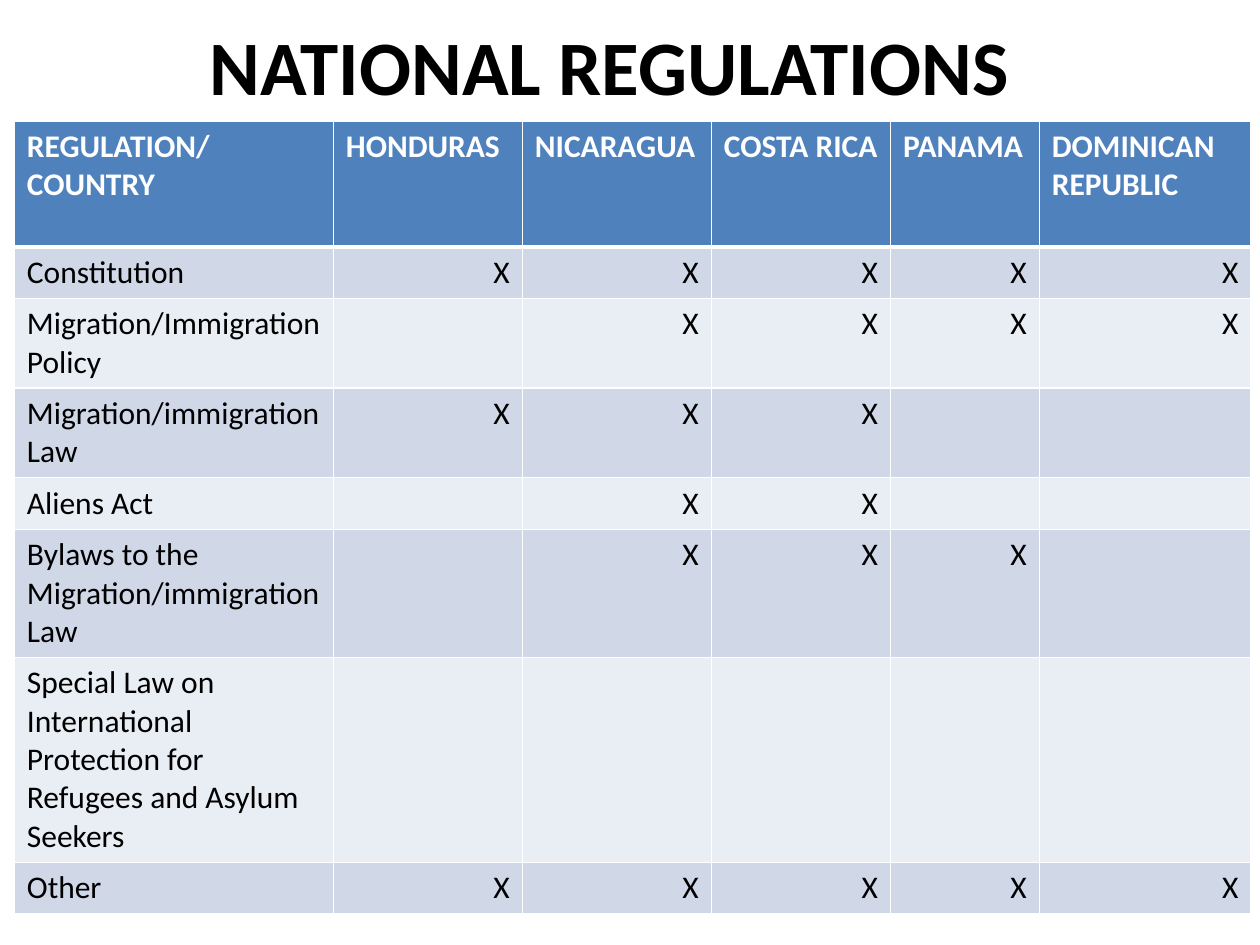
from lxml.etree import SubElement
from pptx import Presentation
from pptx.dml.color import RGBColor
from pptx.enum.text import MSO_ANCHOR, PP_ALIGN
from pptx.oxml.ns import qn
from pptx.util import Cm, Pt

TITLE = "NATIONAL REGULATIONS"
COUNTRIES = ["HONDURAS", "NICARAGUA", "COSTA RICA", "PANAMA", "DOMINICAN REPUBLIC"]
REGULATIONS = [
    ("Constitution", COUNTRIES),
    ("Migration/Immigration Policy", COUNTRIES[1:]),
    ("Migration/immigration Law", COUNTRIES[:3]),
    ("Aliens Act", COUNTRIES[1:3]),
    ("Bylaws to the Migration/immigration Law", COUNTRIES[1:4]),
    ("Special Law on International Protection for Refugees and Asylum Seekers", []),
    ("Other", COUNTRIES),
]
COLUMN_WIDTHS = [6.43, 3.81, 3.81, 3.61, 3, 4.27]
ROW_HEIGHTS = [2.54, 1.04, 1.8, 1.8, 1.04, 2.58, 4.14, 1.04]
HEADER_FILL = "4F81BD"
BAND_FILLS = ["D0D8E8", "E9EDF4"]
WHITE, BLACK = "FFFFFF", "000000"


def color(value):
    return RGBColor.from_string(value)


def write(frame, text, size=18, ink=BLACK, bold=False, align=PP_ALIGN.LEFT):
    para = frame.paragraphs[0]
    para.alignment = align
    span = para.add_run()
    span.text = text
    span.font.name = "Calibri"
    span.font.size = Pt(size)
    span.font.bold = bold
    span.font.color.rgb = color(ink)


def add_borders(cell, top=1, bottom=1):
    properties = cell._tc.get_or_add_tcPr()
    for side, width in (("L", 1), ("R", 1), ("T", top), ("B", bottom)):
        line = SubElement(properties, qn(f"a:ln{side}"), w=str(Pt(width)))
        fill = SubElement(line, qn("a:solidFill"))
        SubElement(fill, qn("a:srgbClr"), val=WHITE)


def style_cell(cell, fill, **borders):
    add_borders(cell, **borders)
    cell.fill.solid()
    cell.fill.fore_color.rgb = color(fill)


def add_title(page):
    title = page.shapes.title
    title.left, title.top = Cm(0.86), Cm(-0.28)
    title.width, title.height = Cm(22.86), Cm(3.18)
    title.text_frame.vertical_anchor = MSO_ANCHOR.MIDDLE
    write(title.text_frame, TITLE, size=44, bold=True, align=PP_ALIGN.CENTER)


def add_regulations(page):
    table = page.shapes.add_table(
        len(ROW_HEIGHTS), len(COLUMN_WIDTHS), Cm(0.29), Cm(2.44),
        Cm(sum(COLUMN_WIDTHS)), Cm(sum(ROW_HEIGHTS)),
    ).table
    for column, width in zip(table.columns, COLUMN_WIDTHS):
        column.width = Cm(width)
    for row, height in zip(table.rows, ROW_HEIGHTS):
        row.height = Cm(height)

    for column, heading in enumerate(["REGULATION/COUNTRY"] + COUNTRIES):
        cell = table.cell(0, column)
        style_cell(cell, HEADER_FILL, bottom=3)
        write(cell.text_frame, heading, ink=WHITE, bold=True)

    for row, (regulation, adopters) in enumerate(REGULATIONS, start=1):
        marks = ["X" if country in adopters else "" for country in COUNTRIES]
        for column, text in enumerate([regulation] + marks):
            cell = table.cell(row, column)
            style_cell(cell, BAND_FILLS[(row - 1) % 2], top=3 if row == 1 else 1)
            if text:
                align = PP_ALIGN.RIGHT if column else PP_ALIGN.LEFT
                write(cell.text_frame, text, align=align)


def main():
    deck = Presentation()
    deck.slide_width, deck.slide_height = Cm(25.4), Cm(19.05)
    page = deck.slides.add_slide(deck.slide_layouts[5])
    add_title(page)
    add_regulations(page)
    deck.save("out.pptx")


if __name__ == "__main__":
    main()
